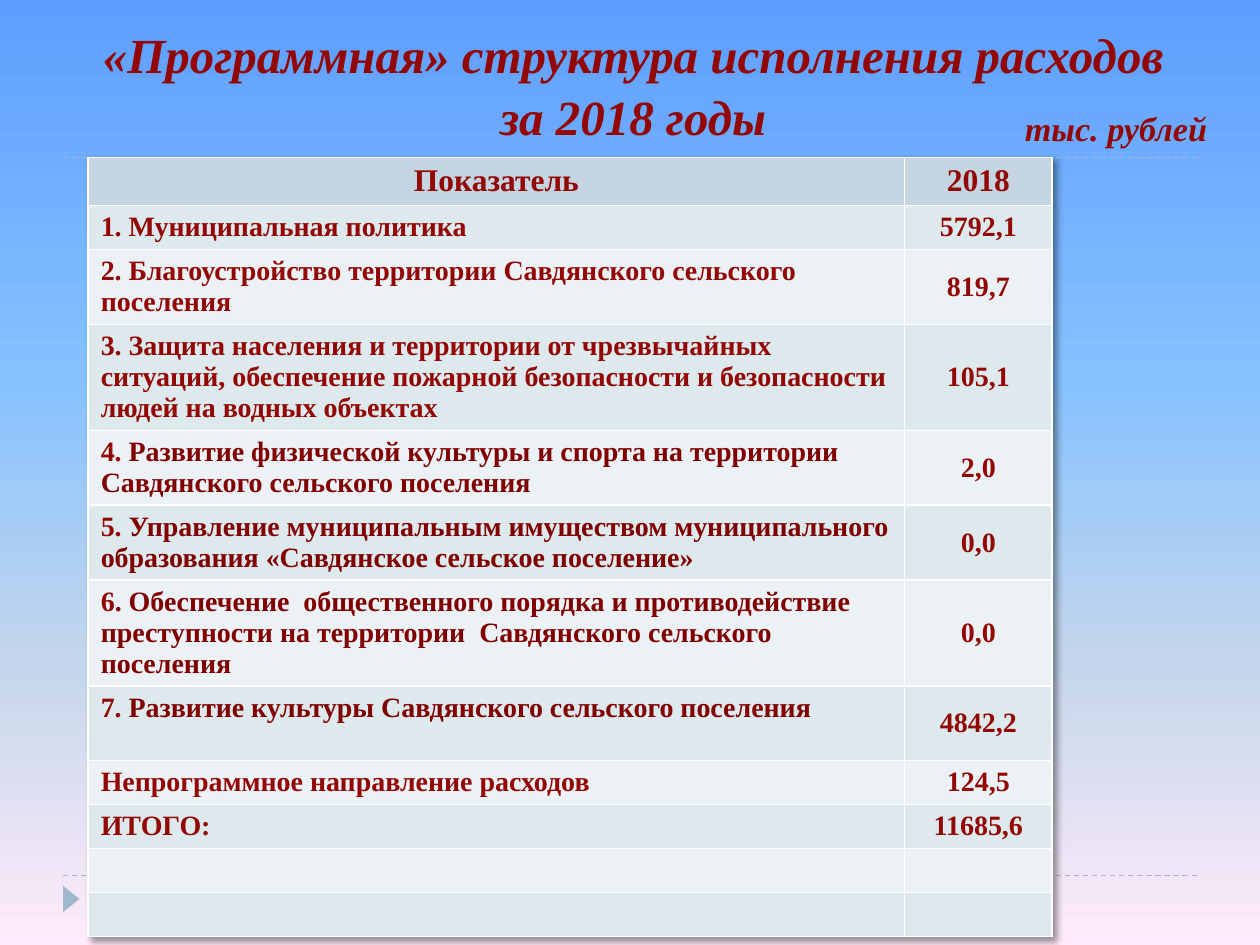
from dataclasses import dataclass

from pptx import Presentation
from pptx.dml.color import RGBColor
from pptx.enum.dml import MSO_LINE
from pptx.enum.shapes import MSO_CONNECTOR, MSO_SHAPE
from pptx.enum.text import MSO_ANCHOR as Anchor, MSO_AUTO_SIZE, PP_ALIGN as Align
from pptx.oxml import parse_xml
from pptx.oxml.ns import nsdecls, qn
from pptx.util import Inches, Pt

TITLE = "«Программная» структура исполнения расходов за 2018 годы"
UNIT = "тыс. рублей"
HEADER = ("", "Показатель", "2018", 0)
PROGRAMS = [
    ("1. Муниципальная политика", "", "5792,1", 1),
    ("2. Благоустройство территории Савдянского сельского поселения", "", "819,7", 2),
    ("3. Защита населения и территории от чрезвычайных ситуаций, обеспечение "
     "пожарной безопасности и безопасности людей на водных объектах", "", "105,1", 3),
    ("4. ", "Развитие физической культуры и спорта на территории "
     "Савдянского сельского поселения", "2,0", 2),
    ("5. ", "Управление муниципальным имуществом муниципального образования "
     "«Савдянское сельское поселение»", "0,0", 2),
    ("6", ". Обеспечение  общественного порядка и противодействие  преступности "
     "на территории  Савдянского сельского поселения", "0,0", 3),
    ("7. ", "Развитие культуры Савдянского сельского поселения", "4842,2", 2),
    ("Непрограммное направление расходов", "", "124,5", 1),
    ("ИТОГО:", "", "11685,6", 1),
    ("", "", "", 1),
    ("", "", "", 1),
]
ROW_HEIGHTS = (0.38, 0.35, 0.59, 0.84)
COLUMN_WIDTHS = (6.48, 1.17)
RULES = (6.95, 1.25)


@dataclass(frozen=True)
class Theme:
    font: str = "Times New Roman"
    red: str = "920704"
    maroon: str = "800000"
    accent: str = "9FB8CD"
    header_fill: str = "C5D4E1"
    bands: tuple = ("DDE9EC", "ECF1F5")
    sky: tuple = ((0, "5E9EFF"), (40, "85C2FF"), (70, "C4D6EB"), (100, "FFEBFA"))
    title: float = 28
    unit: float = 19.5
    header: float = 18
    body: float = 16


THEME = Theme()


def rgb(value):
    return RGBColor.from_string(value)


def style(run, size, color=THEME.red, italic=False):
    font = run.font
    font.name, font.size, font.bold, font.italic = THEME.font, Pt(size), True, italic
    font.color.rgb = rgb(color)


def box(*lengths):
    return [Inches(length) for length in lengths]


def paint_background(slide):
    fill = slide.background.fill
    fill.gradient()
    fill.gradient_angle = 270
    stops = slide.element.find(".//" + qn("a:gsLst"))
    for stop in list(stops):
        stops.remove(stop)
    for share, color in THEME.sky:
        stops.append(parse_xml(
            f'<a:gs {nsdecls("a")} pos="{share * 1000}"><a:srgbClr val="{color}"/></a:gs>'))


def add_decor(slide):
    for y in RULES:
        rule = slide.shapes.add_connector(MSO_CONNECTOR.STRAIGHT, *box(0.5, y, 9.5, y))
        rule.line.color.rgb = rgb(THEME.accent)
        rule.line.width = Pt(0.75)
        rule.line.dash_style = MSO_LINE.DASH
        rule._element.spPr.append(parse_xml(f'<a:effectLst {nsdecls("a")}/>'))
    marker = slide.shapes.add_shape(MSO_SHAPE.ISOSCELES_TRIANGLE, *box(0.46, 7.07, 0.21, 0.13))
    marker.rotation = 90
    marker.shadow.inherit = False
    marker.fill.solid()
    marker.fill.fore_color.rgb = rgb(THEME.accent)
    marker.line.fill.background()


def add_heading(slide):
    title = slide.shapes.title
    title.left, title.top, title.width, title.height = box(0.55, 0.16, 8.95, 1.04)
    unit = slide.shapes.add_textbox(*box(7.89, 0.78, 1.79, 0.47))
    for shape, text, size, anchor, align in (
        (title, TITLE, THEME.title, Anchor.BOTTOM, Align.CENTER),
        (unit, UNIT, THEME.unit, Anchor.MIDDLE, Align.RIGHT),
    ):
        frame = shape.text_frame
        frame.text = text
        frame.word_wrap = True
        frame.auto_size = MSO_AUTO_SIZE.NONE
        frame.vertical_anchor = anchor
        frame.paragraphs[0].alignment = align
        style(frame.paragraphs[0].runs[0], size, italic=True)
    title.text_frame.paragraphs[0].line_spacing = 1.05


def fill_cell(cell, parts, size, fill, align):
    cell.fill.solid()
    cell.fill.fore_color.rgb = rgb(fill)
    paragraph = cell.text_frame.paragraphs[0]
    paragraph.alignment = align
    for text, color in parts:
        if text:
            run = paragraph.add_run()
            run.text = text
            style(run, size, color)
    if not cell.text:
        cell.margin_top = cell.margin_bottom = 0


def add_budget(slide):
    rows = [HEADER, *PROGRAMS]
    heights = [ROW_HEIGHTS[lines] for *_, lines in rows]
    frame = slide.shapes.add_table(
        len(rows), len(COLUMN_WIDTHS), *box(0.7, 1.25, sum(COLUMN_WIDTHS), sum(heights)))
    table = frame.table
    for column, width in zip(table.columns, COLUMN_WIDTHS):
        column.width = Inches(width)
    for i, (number, name, amount, _) in enumerate(rows):
        table.rows[i].height = Inches(heights[i])
        is_header = i == 0
        size = THEME.header if is_header else THEME.body
        fill = THEME.header_fill if is_header else THEME.bands[(i - 1) % 2]
        name_color = THEME.red if is_header else THEME.maroon
        label, value = table.cell(i, 0), table.cell(i, 1)
        fill_cell(label, [(number, THEME.red), (name, name_color)], size, fill,
                  Align.CENTER if is_header else Align.LEFT)
        fill_cell(value, [(amount, THEME.red)], size, fill, Align.CENTER)
        value.vertical_anchor = Anchor.TOP if is_header else Anchor.MIDDLE
    table._tbl.tblPr.insert(0, parse_xml(
        f'<a:effectLst {nsdecls("a")}><a:outerShdw blurRad="50800" dist="38100" dir="2700000">'
        '<a:srgbClr val="000000"><a:alpha val="40000"/></a:srgbClr></a:outerShdw></a:effectLst>'))


def main():
    """Build the slide on programme spending for 2018."""
    deck = Presentation()
    deck.slide_width, deck.slide_height = box(10, 7.5)
    slide = deck.slides.add_slide(deck.slide_layouts[5])
    paint_background(slide)
    add_decor(slide)
    add_budget(slide)
    add_heading(slide)
    deck.save("out.pptx")


if __name__ == "__main__":
    main()
